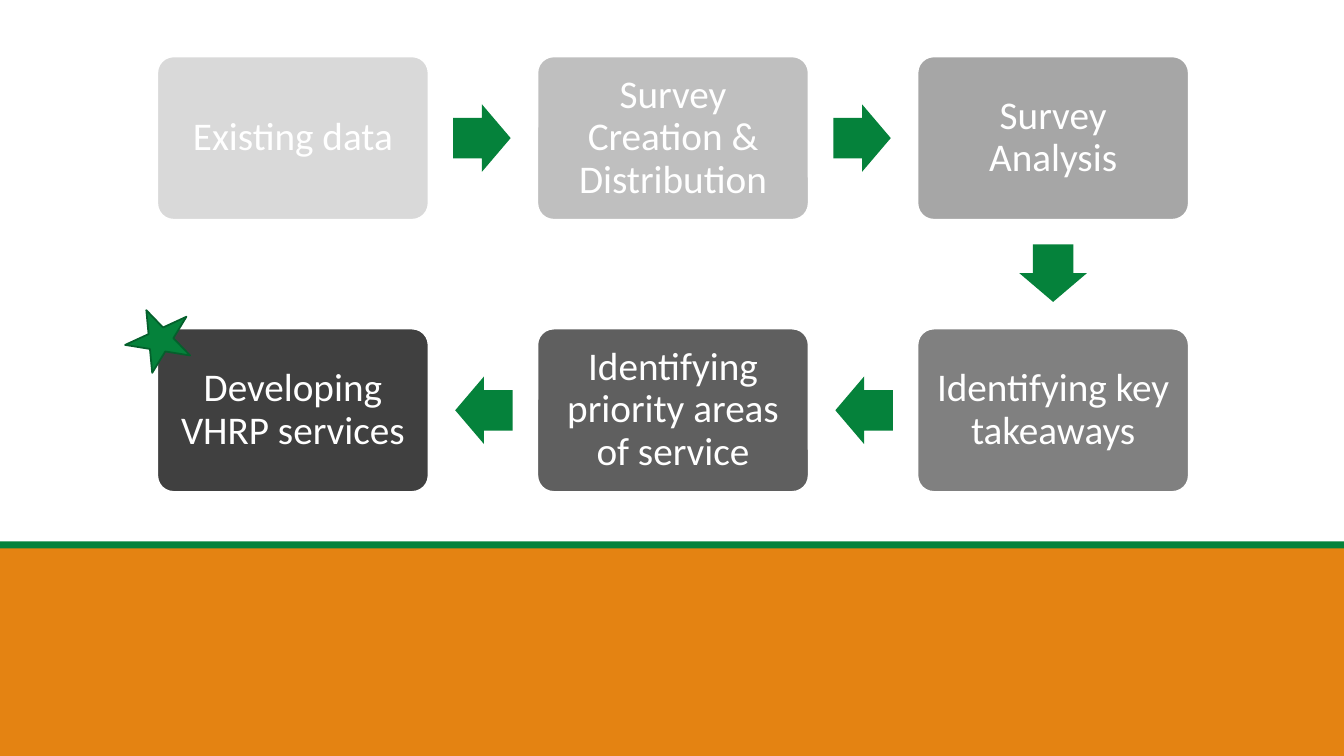
from pptx import Presentation
from pptx.dml.color import RGBColor
from pptx.enum.shapes import MSO_SHAPE
from pptx.enum.text import MSO_ANCHOR, PP_ALIGN
from pptx.util import Inches, Pt

RECTANGLE = MSO_SHAPE.RECTANGLE
ROUNDED = MSO_SHAPE.ROUNDED_RECTANGLE
ARROW = MSO_SHAPE.RIGHT_ARROW
STAR = MSO_SHAPE.STAR_5_POINT
MIDDLE = MSO_ANCHOR.MIDDLE
CENTER = PP_ALIGN.CENTER

COLORS = {
    "white": "FFFFFF",
    "green": "05823B",
    "dark_green": "04602C",
    "orange": "E48312",
}
STEPS = [
    ("Existing data", "D9D9D9"),
    ("Survey Creation & Distribution", "BFBFBF"),
    ("Survey Analysis", "A6A6A6"),
    ("Identifying key takeaways", "808080"),
    ("Identifying priority areas of service", "5F5F5F"),
    ("Developing VHRP services", "404040"),
]
COLUMNS = 3
LEFT, TOP = 1.56, 0.56
STEP_WIDTH, STEP_HEIGHT = 2.69, 1.62
COLUMN_PITCH, ROW_PITCH = 3.77, 2.7
ARROW_WIDTH, ARROW_HEIGHT = 0.57, 0.67


class ProcessSlide:
    """Holds the style and the current slide of the process diagram."""

    def __init__(self, slide):
        self.slide = slide
        self.font = "Calibri"
        self.size = Pt(28)
        self.line_width = Pt(1.25)

    def shape(self, kind, left, top, width, height, fill, line=None, rotation=0):
        shape = self.slide.shapes.add_shape(
            kind, Inches(left), Inches(top), Inches(width), Inches(height))
        shape.shadow.inherit = False
        shape.rotation = rotation
        shape.fill.solid()
        shape.fill.fore_color.rgb = RGBColor.from_string(fill)
        if line:
            shape.line.color.rgb = RGBColor.from_string(line)
            shape.line.width = self.line_width
        else:
            shape.line.fill.background()
        return shape

    def step(self, left, top, text, fill):
        box = self.shape(ROUNDED, left, top, STEP_WIDTH, STEP_HEIGHT, fill, COLORS["white"])
        box.adjustments[0] = 0.1
        frame = box.text_frame
        frame.text = text
        frame.word_wrap = True
        frame.vertical_anchor = MIDDLE
        frame.margin_left = frame.margin_right = Inches(0.12)
        frame.margin_top = frame.margin_bottom = Inches(0.12)
        para = frame.paragraphs[0]
        para.alignment = CENTER
        para.line_spacing = 0.9
        font = para.runs[0].font
        font.name = self.font
        font.size = self.size
        font.color.rgb = RGBColor.from_string(COLORS["white"])

    def arrow(self, center_x, center_y, rotation):
        arrow = self.shape(ARROW, center_x - ARROW_WIDTH / 2, center_y - ARROW_HEIGHT / 2,
                           ARROW_WIDTH, ARROW_HEIGHT, COLORS["green"], rotation=rotation)
        arrow.adjustments[0] = 0.6
        arrow.adjustments[1] = 0.5


def step_position(index):
    """Return the left and top of a step on the path right, down and back left."""
    row, column = divmod(index, COLUMNS)
    if row:
        column = COLUMNS - 1 - column
    return LEFT + column * COLUMN_PITCH, TOP + row * ROW_PITCH


def main():
    deck = Presentation()
    deck.slide_width = Inches(13.33)
    deck.slide_height = Inches(7.5)
    page = ProcessSlide(deck.slides.add_slide(deck.slide_layouts[6]))

    page.shape(RECTANGLE, 0, 5.42, 13.33, 2.08, COLORS["orange"])
    page.shape(RECTANGLE, 0, 5.37, 13.33, 0.07, COLORS["green"])

    for index, (text, fill) in enumerate(STEPS):
        left, top = step_position(index)
        page.step(left, top, text, fill)
        middle = top + STEP_HEIGHT / 2
        if index < COLUMNS - 1:
            page.arrow(left + STEP_WIDTH + 0.53, middle, 0)
        elif index == COLUMNS - 1:
            page.arrow(left + STEP_WIDTH / 2, top + STEP_HEIGHT + 0.53, 90)
        elif index < len(STEPS) - 1:
            page.arrow(left - 0.53, middle, 180)

    page.shape(STAR, 1.24, 3.05, 0.67, 0.59, COLORS["green"], COLORS["dark_green"], 335.3)
    deck.save("out.pptx")


if __name__ == "__main__":
    main()
